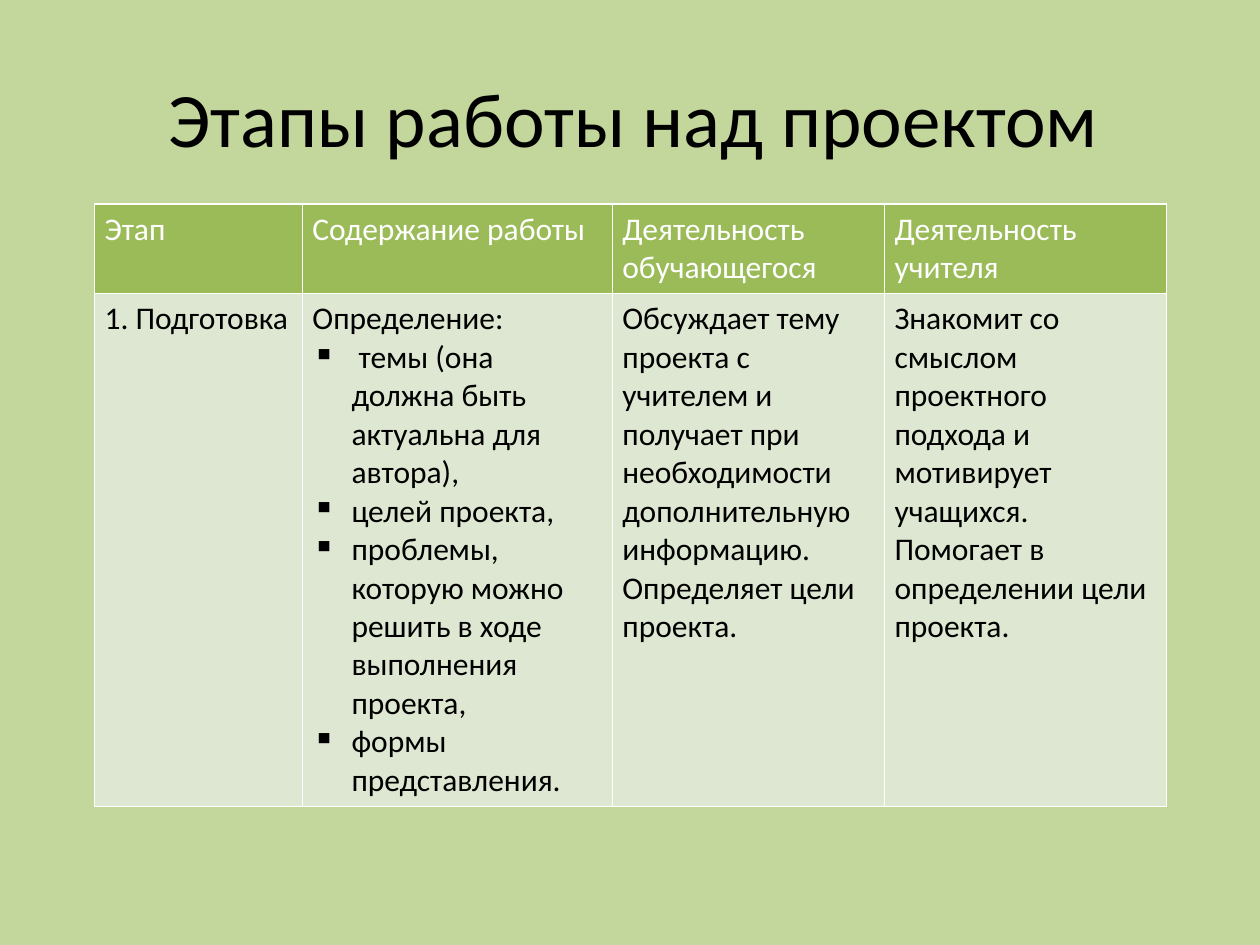
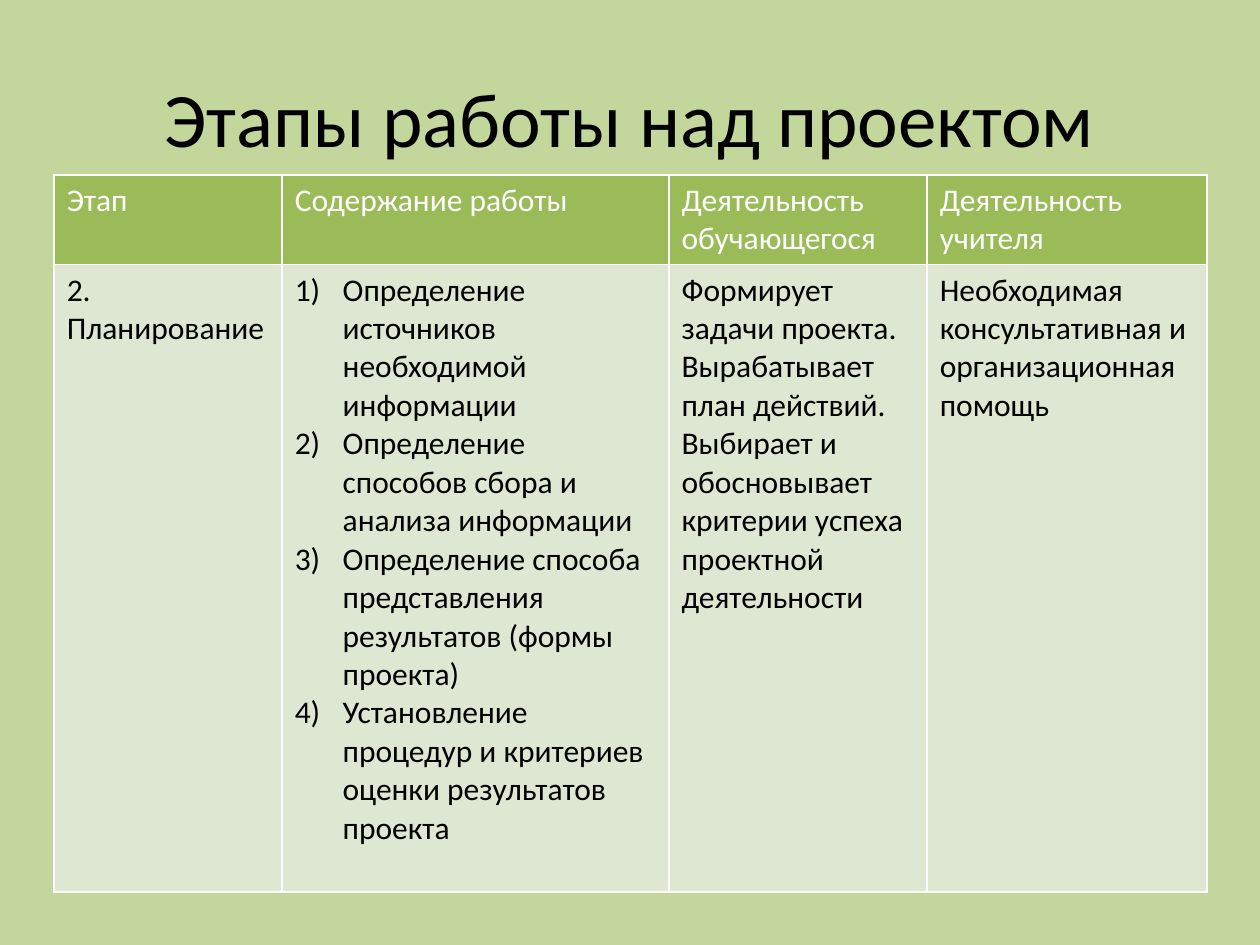
from dataclasses import dataclass

from lxml.etree import SubElement
from pptx import Presentation
from pptx.dml.color import RGBColor
from pptx.enum.text import MSO_ANCHOR, PP_ALIGN
from pptx.oxml import parse_xml
from pptx.oxml.ns import nsdecls, qn
from pptx.util import Inches, Pt


@dataclass(frozen=True)
class Theme:
    font: str = "Calibri"
    background: str = "C3D69B"
    header_fill: str = "9BBB59"
    body_fill: str = "DEE7D1"
    light: str = "FFFFFF"
    dark: str = "000000"
    title_size: int = 44
    table_size: int = 18
    border_width: int = 1


THEME = Theme()
TITLE = "Этапы работы над проектом"
HEADINGS = ["Этап", "Содержание работы", "Деятельность обучающегося", "Деятельность учителя"]
SQUARE_BULLET = ("buChar", {"char": "▪"})
NUMBERED = ("buAutoNum", {"type": "arabicParenR"})

# Each cell is a list of paragraphs; "listed" ones follow the plain "content" ones
STAGES = [
    {
        "title_box": (1.22, 0.36, 7.62, 1.14),
        "table_origin": (0.75, 1.62),
        "columns": (1.65, 2.46, 2.16, 2.24),
        "rows": (0.71, 4.07),
        "side_margin": 0.08,
        "marker": SQUARE_BULLET,
        "indent": 0.31,
        "stage": ["1. Подготовка"],
        "content": ["Определение:"],
        "listed": [
            " темы (она должна быть актуальна для автора),",
            "целей проекта,",
            "проблемы, которую можно решить в ходе выполнения проекта,",
            "формы представления.",
        ],
        "student": [
            "Обсуждает тему проекта с учителем и получает при необходимости "
            "дополнительную информацию. Определяет цели проекта."
        ],
        "teacher": [
            "Знакомит со смыслом проектного подхода и мотивирует учащихся. "
            "Помогает в определении цели проекта."
        ],
    },
    {
        "title_box": (0.5, 0.3, 9, 1.25),
        "table_origin": (0.43, 1.39),
        "columns": (1.81, 3.07, 2.05, 2.22),
        "rows": (0.71, 4.98),
        "side_margin": 0.1,
        "marker": NUMBERED,
        "indent": 0.38,
        "stage": ["2. Планирование"],
        "content": [],
        "listed": [
            "Определение источников необходимой информации",
            "Определение способов сбора и анализа информации",
            "Определение способа представления результатов (формы проекта)",
            "Установление процедур и критериев оценки результатов проекта",
        ],
        "student": [
            "Формирует задачи проекта.",
            "Вырабатывает план действий.",
            "Выбирает и обосновывает критерии успеха проектной деятельности",
        ],
        "teacher": ["Необходимая консультативная и организационная помощь"],
    },
]


def apply_format(target, values):
    for attribute, value in values.items():
        setattr(target, attribute, value)


def style_font(font, size, color):
    apply_format(font, {"name": THEME.font, "size": Pt(size), "bold": False})
    font.color.rgb = RGBColor.from_string(color)


def add_marker(paragraph, marker, indent):
    tag, attributes = marker
    properties = paragraph._p.get_or_add_pPr()
    properties.set("marL", str(Inches(indent)))
    properties.set("indent", str(-Inches(indent)))
    SubElement(properties, qn(f"a:{tag}"), attributes)


def draw_borders(cell):
    properties = cell._tc.get_or_add_tcPr()
    # Border lines come before the fill in the cell properties
    for position, side in enumerate(("lnL", "lnR", "lnT", "lnB")):
        line = parse_xml(
            f'<a:{side} {nsdecls("a")} w="{Pt(THEME.border_width)}"><a:solidFill>'
            f'<a:srgbClr val="{THEME.light}"/></a:solidFill></a:{side}>'
        )
        properties.insert(position, line)


def fill_cell(cell, lines, fill, color, side_margin):
    cell.text = "\n".join(lines)
    apply_format(cell, {
        "margin_left": Inches(side_margin),
        "margin_right": Inches(side_margin),
        "margin_top": Inches(0.05),
        "margin_bottom": Inches(0.05),
        "vertical_anchor": MSO_ANCHOR.TOP,
    })
    cell.fill.solid()
    cell.fill.fore_color.rgb = RGBColor.from_string(fill)
    draw_borders(cell)
    for paragraph in cell.text_frame.paragraphs:
        for run in paragraph.runs:
            style_font(run.font, THEME.table_size, color)


def place_title(slide, box):
    title = slide.shapes.title
    sides = ("left", "top", "width", "height")
    apply_format(title, dict(zip(sides, map(Inches, box))))
    title.text_frame.text = TITLE
    title.text_frame.vertical_anchor = MSO_ANCHOR.MIDDLE
    heading = title.text_frame.paragraphs[0]
    heading.alignment = PP_ALIGN.CENTER
    style_font(heading.runs[0].font, THEME.title_size, THEME.dark)


def add_stage_table(slide, stage):
    columns, rows = stage["columns"], stage["rows"]
    left, top = stage["table_origin"]
    table = slide.shapes.add_table(
        len(rows), len(columns), Inches(left), Inches(top),
        Inches(sum(columns)), Inches(sum(rows)),
    ).table
    apply_format(table, {"first_row": False, "horz_banding": False})
    for column, width in zip(table.columns, columns):
        column.width = Inches(width)
    for row, height in zip(table.rows, rows):
        row.height = Inches(height)

    # Header row and stage row
    details = [stage["stage"], stage["content"] + stage["listed"],
               stage["student"], stage["teacher"]]
    for index, (heading, lines) in enumerate(zip(HEADINGS, details)):
        fill_cell(table.cell(0, index), [heading], THEME.header_fill,
                  THEME.light, stage["side_margin"])
        fill_cell(table.cell(1, index), lines, THEME.body_fill,
                  THEME.dark, stage["side_margin"])

    # Bulleted or numbered part of the content column
    content_paragraphs = table.cell(1, 1).text_frame.paragraphs
    for paragraph in content_paragraphs[len(stage["content"]):]:
        add_marker(paragraph, stage["marker"], stage["indent"])


def add_stage_slide(deck, stage):
    title_only = deck.slide_layouts[5]
    slide = deck.slides.add_slide(title_only)
    place_title(slide, stage["title_box"])
    add_stage_table(slide, stage)


def main():
    deck = Presentation()
    apply_format(deck, {"slide_width": Inches(10), "slide_height": Inches(7.5)})
    # Shared background
    backdrop = deck.slide_master.background.fill
    backdrop.solid()
    backdrop.fore_color.rgb = RGBColor.from_string(THEME.background)
    for stage in STAGES:
        add_stage_slide(deck, stage)
    deck.save("out.pptx")


if __name__ == "__main__":
    main()
